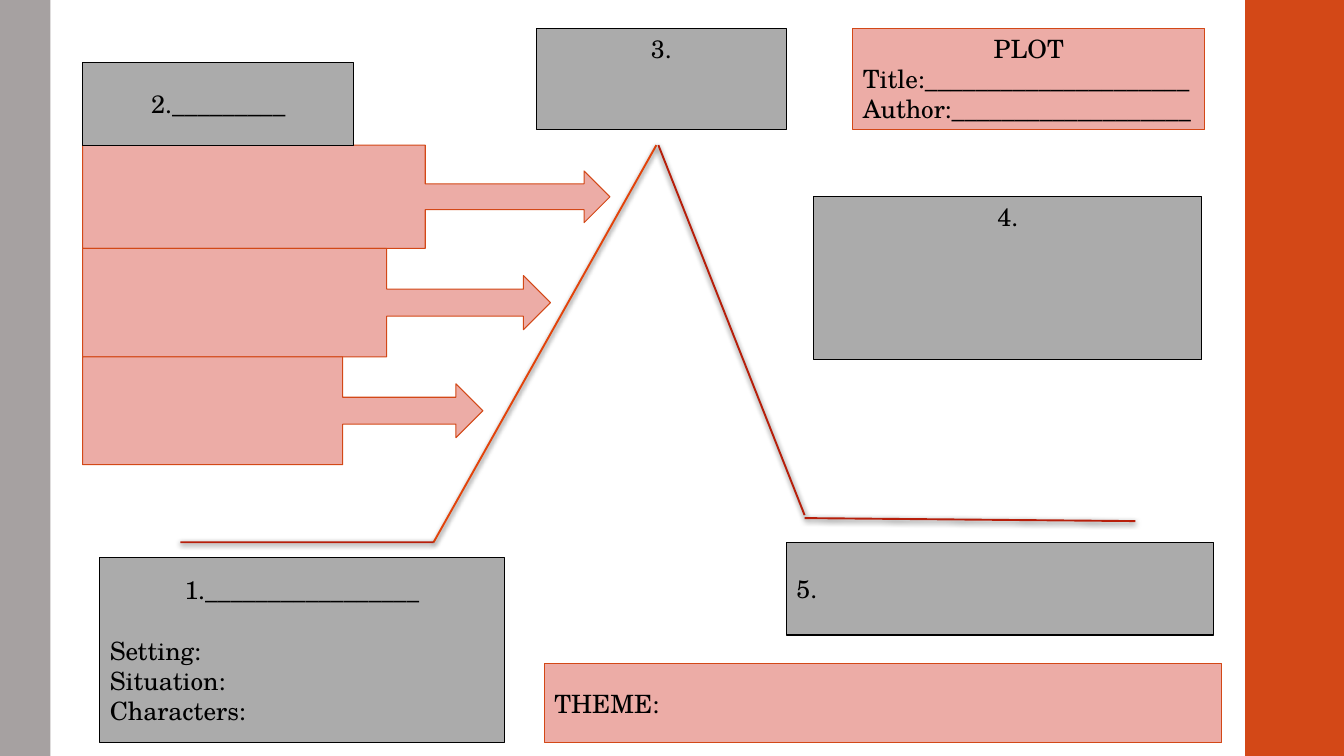
import pptx
import pptx.util
import pptx.dml.color
import pptx.enum.shapes
import pptx.enum.text
import lxml.etree

RGBColor = pptx.dml.color.RGBColor
SHAPE = pptx.enum.shapes.MSO_SHAPE
ALIGN = pptx.enum.text.PP_ALIGN
ANCHOR = pptx.enum.text.MSO_ANCHOR

BLACK = RGBColor(0x00, 0x00, 0x00)
GRAY = RGBColor(0xAB, 0xAB, 0xAB)
PINK = RGBColor(0xEC, 0xAC, 0xA6)
RUST = RGBColor(0xD3, 0x48, 0x17)
STONE = RGBColor(0xA6, 0xA1, 0xA1)
ORANGE = RGBColor(0xE5, 0x3C, 0x00)
RED = RGBColor(0xB6, 0x15, 0x00)

FONT = "TeX Gyre Schola"
COLS, ROWS = 133.3, 75
CELL = pptx.util.Inches(0.1)
NS = "http://schemas.openxmlformats.org/drawingml/2006/main"
SHADOW = f"""<a:effectLst xmlns:a="{NS}">
<a:outerShdw blurRad="50800" dist="15240" dir="5400000" rotWithShape="0">
<a:srgbClr val="000000"><a:alpha val="75000"/></a:srgbClr>
</a:outerShdw></a:effectLst>"""

prs = pptx.Presentation()
prs.slide_width = int(COLS * CELL)
prs.slide_height = ROWS * CELL
s = prs.slides.add_slide(prs.slide_layouts[6])


def add_box(kind, grid, fill, line=None):
    sp = s.shapes.add_shape(kind, *(int(n * CELL) for n in grid))
    sp.shadow.inherit = False
    sp.fill.solid()
    sp.fill.fore_color.rgb = fill
    if line is None:
        sp.line.fill.background()
    else:
        sp.line.color.rgb = line
        sp.line.width = pptx.util.Pt(0.75)
    return sp


add_box(SHAPE.RECTANGLE, (123.5, 0, COLS - 123.5, ROWS), RUST)
add_box(SHAPE.RECTANGLE, (0, 0, 5, ROWS), STONE)

plot_lines = [
    ((43, 53.8), (65.1, 14.4), ORANGE),
    ((65.3, 14.4), (79.8, 51.1), RED),
    ((79.8, 51.4), (112.6, 51.7), RED),
    ((43, 53.8), (17.9, 53.8), RED),
]
for start, end, color in plot_lines:
    ends = [int(n * CELL) for n in start + end]
    cx = s.shapes.add_connector(pptx.enum.shapes.MSO_CONNECTOR.STRAIGHT, *ends)
    cx.line.color.rgb = color
    cx.line.width = pptx.util.Pt(1.35)
    spPr = cx._element.spPr
    clr = spPr.find(f".//{{{NS}}}srgbClr")
    lxml.etree.SubElement(clr, f"{{{NS}}}alpha", val="95000")
    spPr.append(lxml.etree.fromstring(SHADOW))

top = 14.4
for width, height in [(52.3, 10.25), (46.4, 10.75), (39.7, 10.7)]:
    add_box(SHAPE.RIGHT_ARROW_CALLOUT, (8.2, top, width, height), PINK, RUST)
    top += height

L, C = ALIGN.LEFT, ALIGN.CENTER
T, M = ANCHOR.TOP, ANCHOR.MIDDLE
boxes = [
    ((53.2, 2.8, 24.8, 10.1), GRAY, BLACK, T, C, ["3."]),
    ((84.6, 2.8, 34.9, 10.1), PINK, RUST, T, C,
     ["PLOT", "Title:" + "_" * 21, "Author:" + "_" * 19]),
    ((80.7, 19.5, 38.5, 16.2), GRAY, BLACK, T, C, ["4."]),
    ((8.2, 6.2, 26.9, 8.2), GRAY, BLACK, M, C, ["2." + "_" * 9]),
    ((9.9, 55.35, 40.1, 18.3), GRAY, BLACK, M, C,
     ["1." + "_" * 17, "Setting:", "Situation:", "Characters:"]),
    ((78, 53.8, 42.4, 9.2), GRAY, BLACK, M, L, ["5."]),
    ((54, 65.8, 67.2, 7.9), PINK, RUST, M, L, ["THEME:"]),
]
for grid, fill, line, anchor, first_align, texts in boxes:
    tf = add_box(SHAPE.RECTANGLE, grid, fill, line).text_frame
    tf.word_wrap = True
    tf.vertical_anchor = anchor
    tf.text = "\n".join(texts)
    for p in tf.paragraphs:
        p.alignment = L
        f = p.runs[0].font
        f.name = FONT
        f.size = pptx.util.Pt(18)
        f.color.rgb = BLACK
    tf.paragraphs[0].alignment = first_align
    if "Setting:" in texts:
        tf.paragraphs[0].space_after = pptx.util.Pt(21.6)

prs.save("out.pptx")
